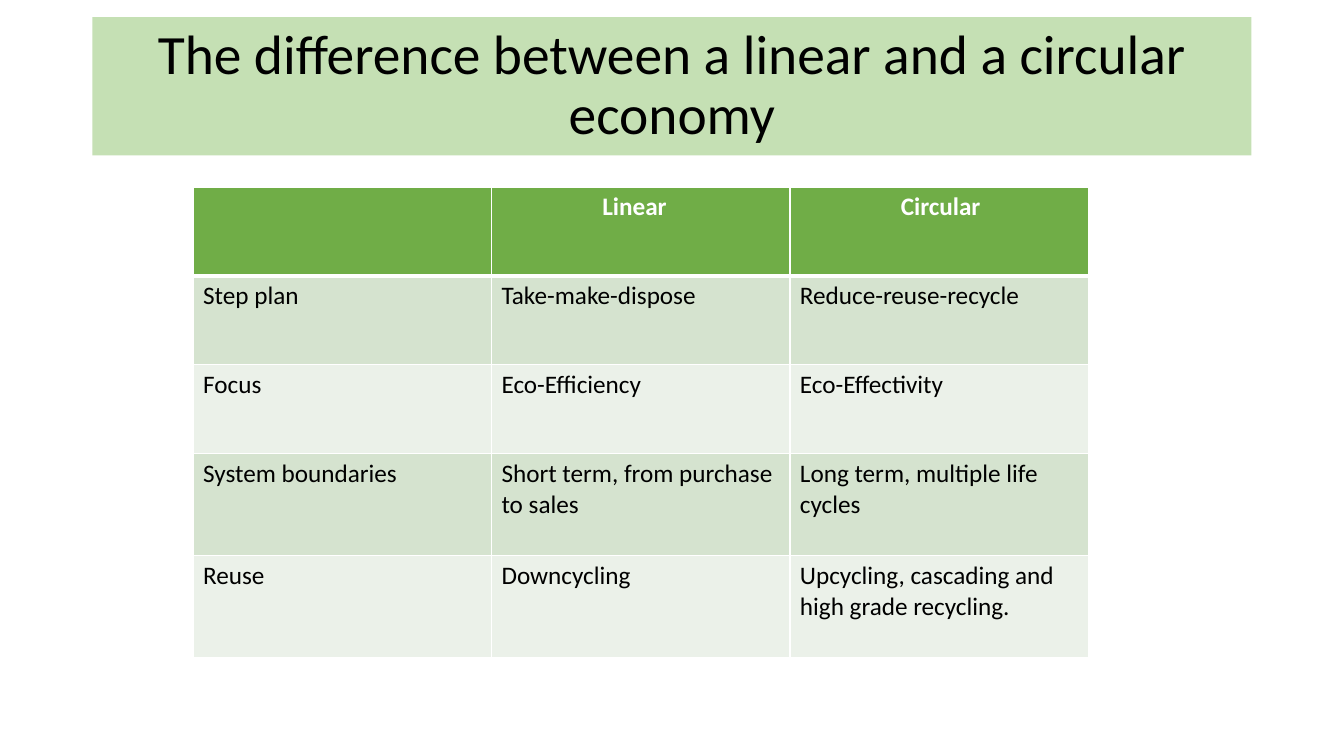
import pptx
import pptx.dml.color
import pptx.enum.text
import pptx.oxml.ns
import pptx.util
import lxml.etree

Cm = pptx.util.Cm
RGBColor = pptx.dml.color.RGBColor
ALIGN = pptx.enum.text.PP_ALIGN
ANCHOR = pptx.enum.text.MSO_ANCHOR

BLACK = RGBColor(0x00, 0x00, 0x00)
WHITE = RGBColor(0xFF, 0xFF, 0xFF)
TITLE_GREEN = RGBColor(0xC5, 0xE0, 0xB4)
HEADER_GREEN = RGBColor(0x70, 0xAD, 0x47)
BAND_DARK = RGBColor(0xD5, 0xE3, 0xCF)
BAND_LIGHT = RGBColor(0xEB, 0xF1, 0xE9)


def write_text(frame, text, size=18, color=BLACK, bold=False, align=ALIGN.LEFT, spacing=1.0):
    frame.word_wrap = True
    para = frame.paragraphs[0]
    para.alignment = align
    para.line_spacing = spacing
    span = para.add_run()
    span.text = text
    span.font.name = "Calibri"
    span.font.size = pptx.util.Pt(size)
    span.font.bold = bold
    span.font.color.rgb = color


def add_border(cell, side, points):
    properties = cell._tc.get_or_add_tcPr()
    line = lxml.etree.SubElement(properties, pptx.oxml.ns.qn(f"a:ln{side}"), w=str(pptx.util.Pt(points)))
    fill = lxml.etree.SubElement(line, pptx.oxml.ns.qn("a:solidFill"))
    lxml.etree.SubElement(fill, pptx.oxml.ns.qn("a:srgbClr"), val=str(WHITE))


deck = pptx.Presentation()
deck.slide_width = Cm(33.87)
deck.slide_height = Cm(19.05)
page = deck.slides.add_slide(deck.slide_layouts[6])

title_box = page.shapes.add_textbox(Cm(2.33), Cm(0.43), Cm(29.21), Cm(3.49))
title_box.fill.solid()
title_box.fill.fore_color.rgb = TITLE_GREEN
title_box.text_frame.vertical_anchor = ANCHOR.MIDDLE
write_text(title_box.text_frame, "The difference between a linear and a circular economy",
           size=39.6, align=ALIGN.CENTER, spacing=0.9)

rows = [
    ("", "Linear", "Circular"),
    ("Step plan", "Take-make-dispose", "Reduce-reuse-recycle"),
    ("Focus", "Eco-Efficiency", "Eco-Effectivity"),
    ("System boundaries", "Short term, from purchase to sales", "Long term, multiple life cycles"),
    ("Reuse", "Downcycling", "Upcycling, cascading and high grade recycling."),
]
row_heights = [Cm(2.24)] * 3 + [Cm(2.57)] * 2

table = page.shapes.add_table(len(rows), len(rows[0]), Cm(4.87), Cm(4.71),
                              Cm(22.56), sum(row_heights)).table
for column in table.columns:
    column.width = Cm(7.52)

for row_index, (texts, height) in enumerate(zip(rows, row_heights)):
    table.rows[row_index].height = height
    is_header = row_index == 0
    band = BAND_DARK if row_index % 2 else BAND_LIGHT
    for column_index, text in enumerate(texts):
        cell = table.cell(row_index, column_index)
        for side in "LRTB":
            under_header = (row_index, side) in [(0, "B"), (1, "T")]
            add_border(cell, side, 3 if under_header else 1)
        cell.fill.solid()
        cell.fill.fore_color.rgb = HEADER_GREEN if is_header else band
        cell.margin_left = Cm(2.79) if is_header else Cm(0.25)
        if text:
            write_text(cell.text_frame, text, color=WHITE if is_header else BLACK, bold=is_header)

deck.save("out.pptx")
